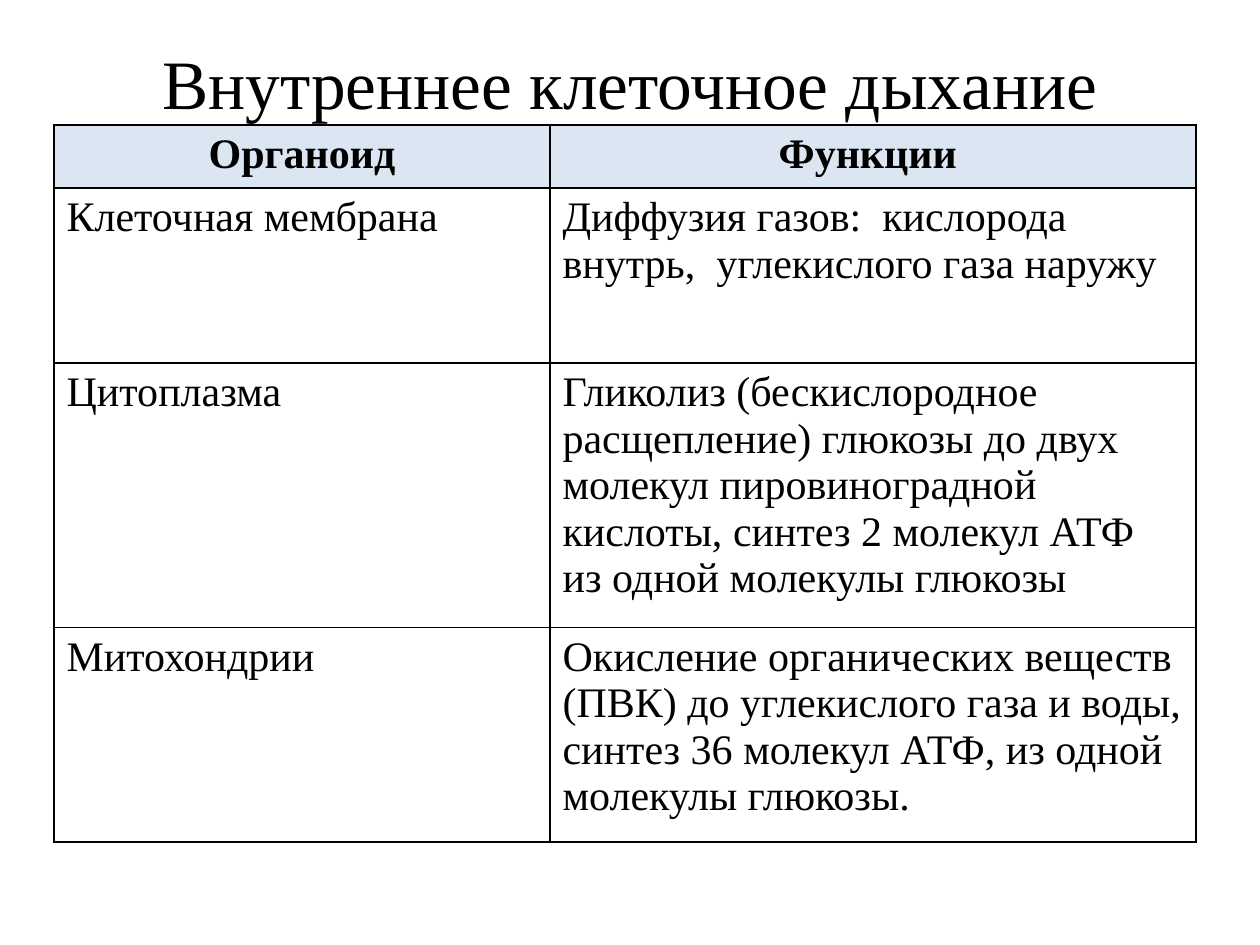
from lxml import etree
from pptx import Presentation, util as u
from pptx.dml.color import RGBColor
from pptx.enum import text
from pptx.oxml import ns

PX = 914400 / 126
FONT = "Times New Roman"
BLACK = RGBColor(0x00, 0x00, 0x00)
PALE_BLUE = RGBColor(0xDC, 0xE6, 0xF2)

TITLE = "Внутреннее клеточное дыхание"
ROWS = [
    ("Органоид", "Функции "),
    ("Клеточная мембрана",
     "Диффузия газов:  кислорода внутрь,  углекислого газа наружу"),
    ("Цитоплазма",
     "Гликолиз (бескислородное расщепление) глюкозы до двух молекул "
     "пировиноградной кислоты, синтез 2 молекул АТФ из одной молекулы глюкозы"),
    ("Митохондрии",
     "Окисление органических веществ (ПВК) до углекислого газа и воды, "
     "синтез 36 молекул АТФ, из одной молекулы глюкозы."),
]
COLUMN_WIDTHS = [496, 646]
ROW_HEIGHTS = [59, 175, 244, 198]


def px(value):
    return u.Emu(round(value * PX))


def style(paragraph, size, bold=False, centred=False):
    paragraph.font.name = FONT
    paragraph.font.size = u.Pt(size)
    paragraph.font.bold = bold
    paragraph.font.color.rgb = BLACK
    paragraph.alignment = text.PP_ALIGN.CENTER if centred else text.PP_ALIGN.LEFT


def add_borders(cell):
    properties = cell._tc.get_or_add_tcPr()
    for position, side in enumerate(("lnL", "lnR", "lnT", "lnB")):
        line = etree.Element(ns.qn(f"a:{side}"), w=str(u.Pt(1)))
        fill = etree.SubElement(line, ns.qn("a:solidFill"))
        etree.SubElement(fill, ns.qn("a:srgbClr"), val=str(BLACK))
        properties.insert(position, line)


prs = Presentation()
prs.slide_width, prs.slide_height = px(1260), px(945)
slide = prs.slides.add_slide(prs.slide_layouts[6])

# Title
title = slide.shapes.add_textbox(px(63), px(38), px(1134), px(87)).text_frame
title.word_wrap = True
title.vertical_anchor = text.MSO_ANCHOR.MIDDLE
title.text = TITLE
style(title.paragraphs[0], 39.6, centred=True)

# Table of organelles and their functions
organelles = slide.shapes.add_table(
    len(ROWS), len(COLUMN_WIDTHS), px(54), px(125),
    px(sum(COLUMN_WIDTHS)), px(sum(ROW_HEIGHTS))).table
organelles.horz_banding = False
for column, width in zip(organelles.columns, COLUMN_WIDTHS):
    column.width = px(width)
for index, (row, height, contents) in enumerate(
        zip(organelles.rows, ROW_HEIGHTS, ROWS)):
    row.height = px(height)
    header = index == 0
    for cell, content in zip(row.cells, contents):
        cell.text = content
        style(cell.text_frame.paragraphs[0], 24, bold=header, centred=header)
        if header:
            cell.fill.solid()
            cell.fill.fore_color.rgb = PALE_BLUE
        else:
            cell.fill.background()
        add_borders(cell)

prs.save("out.pptx")
